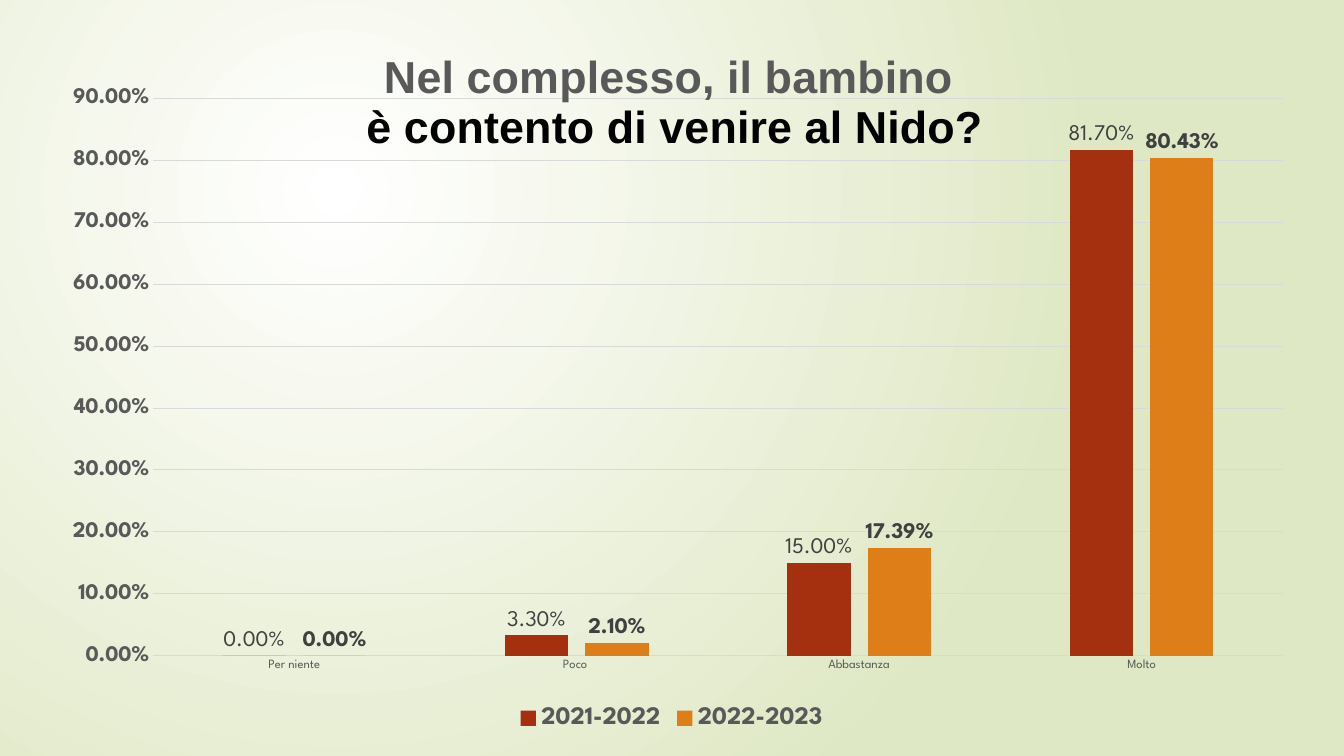
from pptx import Presentation
from pptx.chart.data import CategoryChartData
from pptx.dml.color import RGBColor
from pptx.enum.chart import XL_CHART_TYPE as ChartType
from pptx.enum.chart import XL_LABEL_POSITION as LabelPosition
from pptx.enum.chart import XL_LEGEND_POSITION as LegendPosition
from pptx.enum.chart import XL_TICK_MARK as TickMark
from pptx.oxml import parse_xml
from pptx.oxml.ns import nsdecls, qn
from pptx.util import Cm, Pt

COLORS = {
    "black": "000000", "label": "404040", "axis": "595959", "grid": "D9D9D9",
    "rust": "A53010", "orange": "DE7E18", "center": "FFFFFF", "edge": "DFE8C4",
}
CHART_FONT, TITLE_FONT = "League Spartan", "Arial"
PERCENT = "0.00%"

TITLE = [("Nel complesso, il bambino ", "axis"),
         ("è contento di venire al Nido?", "black")]
CATEGORIES = ["Per niente", "Poco ", "Abbastanza", "Molto"]
# name, values, fill, bold labels
SERIES = [
    ("2021-2022", (0, 0.033, 0.15, 0.817), "rust", False),
    ("2022-2023", (0, 0.021, 0.1739, 0.8043), "orange", True),
]


def rgb(name):
    return RGBColor.from_string(COLORS[name])


def style_font(font, size, color, bold=False, name=CHART_FONT):
    font.size, font.bold, font.name = Pt(size), bold, name
    font.color.rgb = rgb(color)


def style_line(line, color):
    line.color.rgb = rgb(color)
    line.width = Pt(0.75)


def set_layout(parent, index, inner=False, **fractions):
    """Place a chart part by fractions of the chart's width and height."""
    for layout in parent.findall(qn("c:layout")):
        parent.remove(layout)
    target = '<c:layoutTarget val="inner"/>' if inner else ""
    modes = "".join(f'<c:{key}Mode val="edge"/>' for key in "xy")
    sizes = "".join(f'<c:{key} val="{value}"/>' for key, value in fractions.items())
    parent.insert(index, parse_xml(
        f'<c:layout {nsdecls("c")}><c:manualLayout>{target}{modes}{sizes}'
        "</c:manualLayout></c:layout>"))


def set_radial_background(slide):
    slide.background.fill.gradient()
    gradient = next(slide.element.iter(qn("a:gradFill")))
    stops = "".join(
        f'<a:gs pos="{position}"><a:srgbClr val="{COLORS[name]}"/></a:gs>'
        for position, name in ((0, "center"), (100000, "edge")))
    gradient.getparent().replace(gradient, parse_xml(
        f'<a:gradFill {nsdecls("a")} rotWithShape="1"><a:gsLst>{stops}</a:gsLst>'
        '<a:path path="circle"><a:fillToRect l="50000" t="50000" r="100000" b="100000"/>'
        "</a:path></a:gradFill>"))


def add_title(chart):
    chart.has_title = True
    frame = chart.chart_title.text_frame
    for index, (text, color) in enumerate(TITLE):
        paragraph = frame.add_paragraph() if index else frame.paragraphs[0]
        paragraph.text = text
        style_font(paragraph.font, 32, color, True, TITLE_FONT)
    title = next(chart.element.iter(qn("c:title")))
    set_layout(title, 1, x=0.254, y=0.035)
    title.find(qn("c:overlay")).set("val", "1")


def style_axes(chart):
    category_axis, value_axis = chart.category_axis, chart.value_axis
    for axis, size, bold in ((category_axis, 9, False), (value_axis, 16, True)):
        axis.major_tick_mark = axis.minor_tick_mark = TickMark.NONE
        style_font(axis.tick_labels.font, size, "axis", bold)
    style_line(category_axis.format.line, "grid")
    value_axis.format.line.fill.background()
    value_axis.has_major_gridlines = True
    style_line(value_axis.major_gridlines.format.line, "grid")
    value_axis.minimum_scale, value_axis.maximum_scale = 0, 0.9
    value_axis.major_unit = 0.1
    value_axis.tick_labels.number_format = PERCENT
    value_axis.tick_labels.number_format_is_linked = False


def style_columns(plot):
    plot.gap_width, plot.overlap = 219, -27
    plot.vary_by_categories = False
    for series, (_, _, color, bold) in zip(plot.series, SERIES):
        series.format.fill.solid()
        series.format.fill.fore_color.rgb = rgb(color)
        labels = series.data_labels
        labels.show_value = True
        labels.position = LabelPosition.OUTSIDE_END
        labels.number_format = PERCENT
        labels.number_format_is_linked = False
        style_font(labels.font, 16, "label", bold)


def add_survey_chart(slide):
    data = CategoryChartData(number_format=PERCENT)
    data.categories = CATEGORIES
    for name, values, _, _ in SERIES:
        data.add_series(name, values)
    chart = slide.shapes.add_chart(
        ChartType.COLUMN_CLUSTERED, Cm(1.14), Cm(0.56), Cm(31.57), Cm(17.96), data).chart
    style_font(chart.font, 10, "black")
    add_title(chart)
    style_axes(chart)
    style_columns(chart.plots[0])
    set_layout(next(chart.element.iter(qn("c:plotArea"))), 0, inner=True,
               x=0.086, y=0.107, w=0.902, h=0.782)
    chart.has_legend = True
    chart.legend.position = LegendPosition.BOTTOM
    chart.legend.include_in_layout = False
    style_font(chart.legend.font, 18, "axis", True)


def main():
    presentation = Presentation()
    presentation.slide_width, presentation.slide_height = Cm(33.87), Cm(19.05)
    slide = presentation.slides.add_slide(presentation.slide_layouts[6])
    set_radial_background(slide)
    add_survey_chart(slide)
    presentation.save("out.pptx")


if __name__ == "__main__":
    main()
